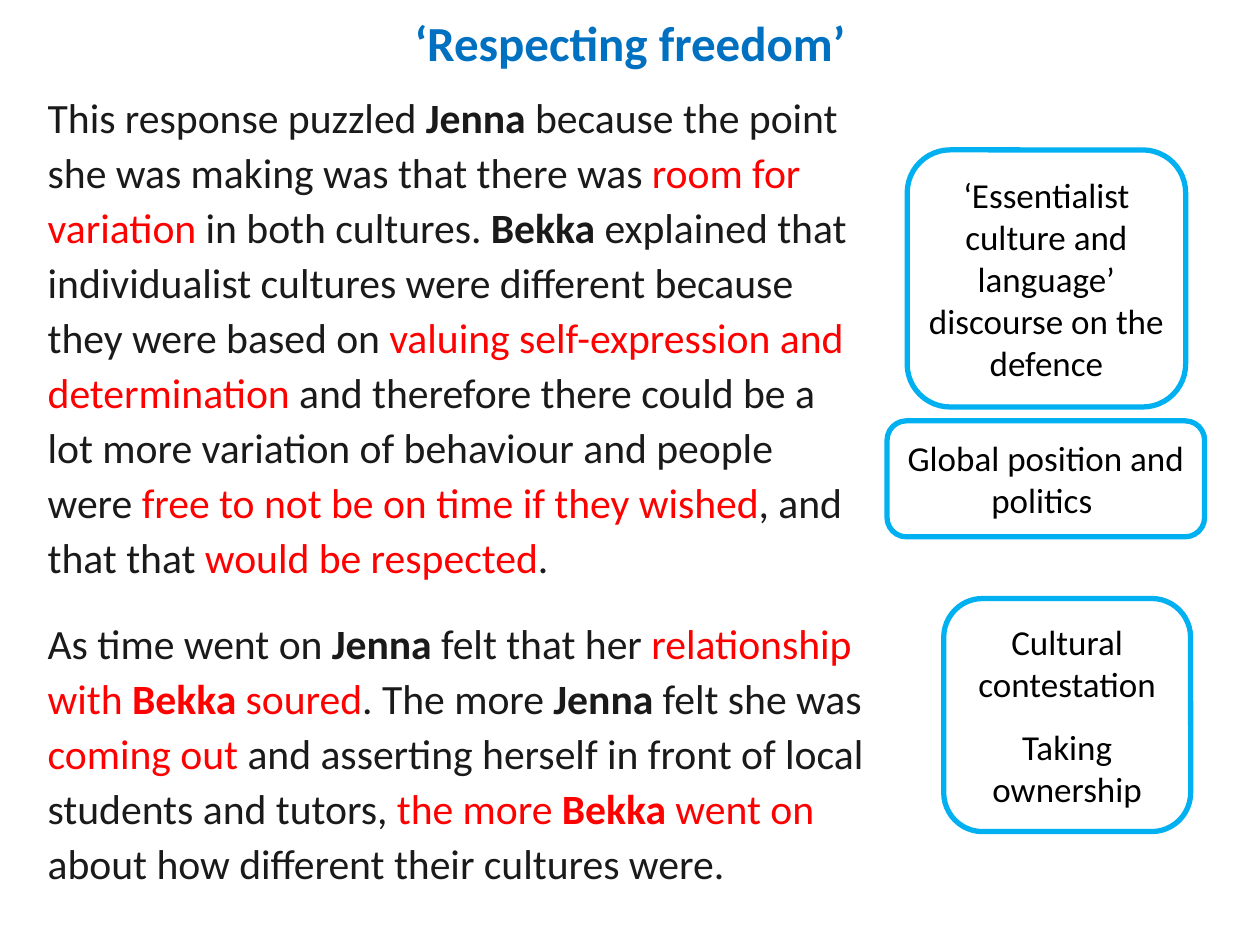
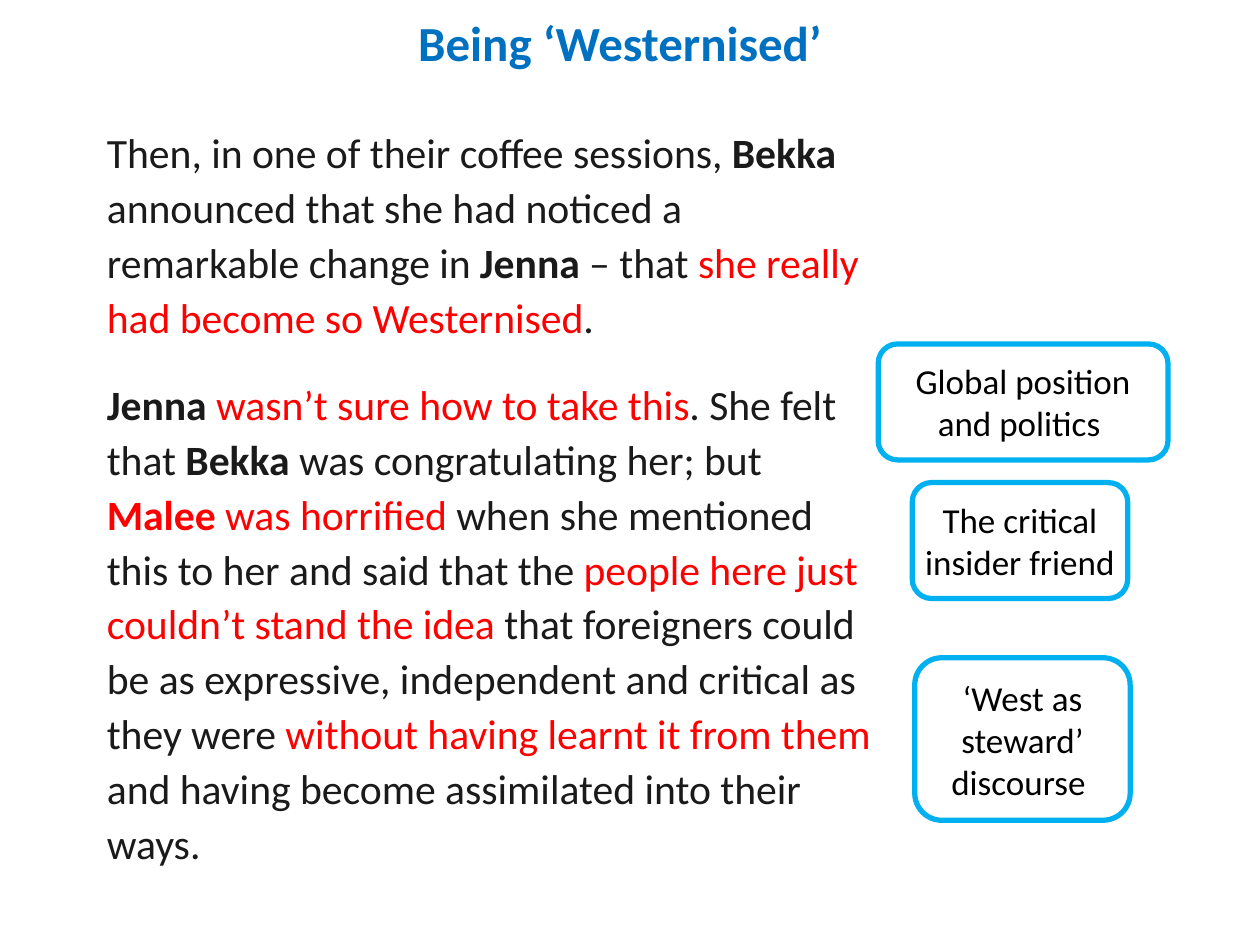
import pptx
import pptx.dml.color
import pptx.enum.shapes
import pptx.enum.text
import pptx.oxml
import pptx.oxml.ns
import pptx.util
from lxml import etree

PX = 9144  # EMU in one px, at 100 px to the inch
FONT = "Calibri"
TITLE_BLUE = "0070C0"
BOX_BLUE = "00B0F0"
INK = "1A1A1A"
RED = "FF0000"
BLACK = "000000"
WHITE = "FFFFFF"

ALIGN = pptx.enum.text.PP_ALIGN
ANCHOR = pptx.enum.text.MSO_ANCHOR

# In the stories, *...* is bold and [...] is red.
FREEDOM_STORY = [
    "This response puzzled *Jenna* because the point she was making was that "
    "there was [room for variation ]in both cultures. *Bekka* explained that "
    "individualist cultures were different because they were based on "
    "[valuing self-expression and determination ]and therefore there could be "
    "a lot more variation of behaviour and people were [free to not be on time "
    "if they wished], and that that [would be respected].",
    "As time went on *Jenna* felt that her [relationship with *Bekka* soured]. "
    "The more *Jenna* felt she was [coming out ]and asserting herself in front "
    "of local students and tutors, [the more *Bekka* went on] about how "
    "different their cultures were.",
]
WESTERNISED_STORY = [
    "Then, in one of their coffee sessions, *Bekka* announced that she had "
    "noticed a remarkable change in *Jenna* – that [she really had become so "
    "Westernised].",
    "*Jenna *[wasn’t sure how to take this]. She felt that *Bekka* was "
    "congratulating her; but [*Malee* was horrified ]when she mentioned this "
    "to her and said that the [people here just couldn’t stand the idea ]that "
    "foreigners could be as expressive, independent and critical as they were "
    "[without having learnt it from them ]and having become assimilated into "
    "their ways.",
]


def color(hex_string):
    return pptx.dml.color.RGBColor.from_string(hex_string)


def box(left, top, width, height):
    return [pptx.util.Emu(length * PX) for length in (left, top, width, height)]


def style_run(run, size, hex_string, bold=False):
    run.font.name = FONT
    run.font.size = pptx.util.Pt(size)
    run.font.bold = bold
    run.font.color.rgb = color(hex_string)


def split_markup(text):
    """Yield (text, bold, red) for each stretch of one style."""
    bold = red = False
    stretch = ""
    for letter in text:
        if letter not in "*[]":
            stretch += letter
            continue
        if stretch:
            yield stretch, bold, red
        stretch = ""
        if letter == "*":
            bold = not bold
        else:
            red = letter == "["
    if stretch:
        yield stretch, bold, red


def next_paragraph(text_frame, index):
    return text_frame.paragraphs[0] if index == 0 else text_frame.add_paragraph()


def add_text_frame(slide, place):
    text_frame = slide.shapes.add_textbox(*box(*place)).text_frame
    text_frame.word_wrap = True
    return text_frame


def add_title(slide, left, text):
    text_frame = add_text_frame(slide, (left, 4, 850, 58))
    text_frame.vertical_anchor = ANCHOR.MIDDLE
    text_frame.text = text
    paragraph = text_frame.paragraphs[0]
    paragraph.alignment = ALIGN.CENTER
    style_run(paragraph.runs[0], 28, TITLE_BLUE, bold=True)


def add_story(slide, place, story):
    text_frame = add_text_frame(slide, place)
    for index, text in enumerate(story):
        paragraph = next_paragraph(text_frame, index)
        paragraph.line_spacing = 1.1
        paragraph.space_before = pptx.util.Pt(18)
        for stretch, bold, red in split_markup(text):
            run = paragraph.add_run()
            run.text = stretch
            style_run(run, 23.8, RED if red else INK, bold)


def set_opacity(shape, percent):
    fill_color = shape.fill._xPr.find(".//" + pptx.oxml.ns.qn("a:srgbClr"))
    alpha = etree.SubElement(fill_color, pptx.oxml.ns.qn("a:alpha"))
    alpha.set("val", str(percent * 1000))


def add_theme_box(slide, place, themes):
    shape = slide.shapes.add_shape(
        pptx.enum.shapes.MSO_SHAPE.ROUNDED_RECTANGLE, *box(*place))
    shape.shadow.inherit = False
    shape.fill.solid()
    shape.fill.fore_color.rgb = color(WHITE)
    set_opacity(shape, 75)
    shape.line.color.rgb = color(BOX_BLUE)
    shape.line.width = pptx.util.Pt(3)

    text_frame = shape.text_frame
    text_frame.word_wrap = True
    text_frame.auto_size = pptx.enum.text.MSO_AUTO_SIZE.SHAPE_TO_FIT_TEXT
    text_frame.vertical_anchor = ANCHOR.MIDDLE
    text_frame.margin_left = text_frame.margin_right = pptx.util.Emu(PX)
    text_frame.margin_top = text_frame.margin_bottom = pptx.util.Emu(8 * PX)
    for index, theme in enumerate(themes):
        paragraph = next_paragraph(text_frame, index)
        paragraph.text = theme
        paragraph.alignment = ALIGN.CENTER
        paragraph.space_before = paragraph.space_after = pptx.util.Pt(6)
        style_run(paragraph.runs[0], 20, BLACK)


def add_story_slide(presentation, title_left, title, story_place, story, theme_boxes):
    slide = presentation.slides.add_slide(presentation.slide_layouts[6])
    add_title(slide, title_left, title)
    add_story(slide, story_place, story)
    for place, themes in theme_boxes:
        add_theme_box(slide, place, themes)


def main():
    presentation = pptx.Presentation()
    presentation.slide_width = pptx.util.Emu(1000 * PX)
    presentation.slide_height = pptx.util.Emu(750 * PX)

    # Respecting freedom
    add_story_slide(
        presentation, 75, "‘Respecting freedom’",
        (28, 64, 669, 690), FREEDOM_STORY,
        [
            ((720, 119, 221, 204),
             ["‘Essentialist culture and language’ discourse on the defence"]),
            ((749, 475, 196, 185), ["Cultural contestation", "Taking ownership"]),
            ((704, 334, 252, 92), ["Global position and politics "]),
        ])

    # Being Westernised
    add_story_slide(
        presentation, 67, "Being ‘Westernised’",
        (75, 92, 630, 638), WESTERNISED_STORY,
        [
            ((726, 522, 171, 129), ["‘West as steward’ discourse "]),
            ((724, 383, 171, 92), ["The critical insider friend"]),
            ((697, 273, 230, 92), ["Global position and politics "]),
        ])

    presentation.save("out.pptx")


if __name__ == "__main__":
    main()
